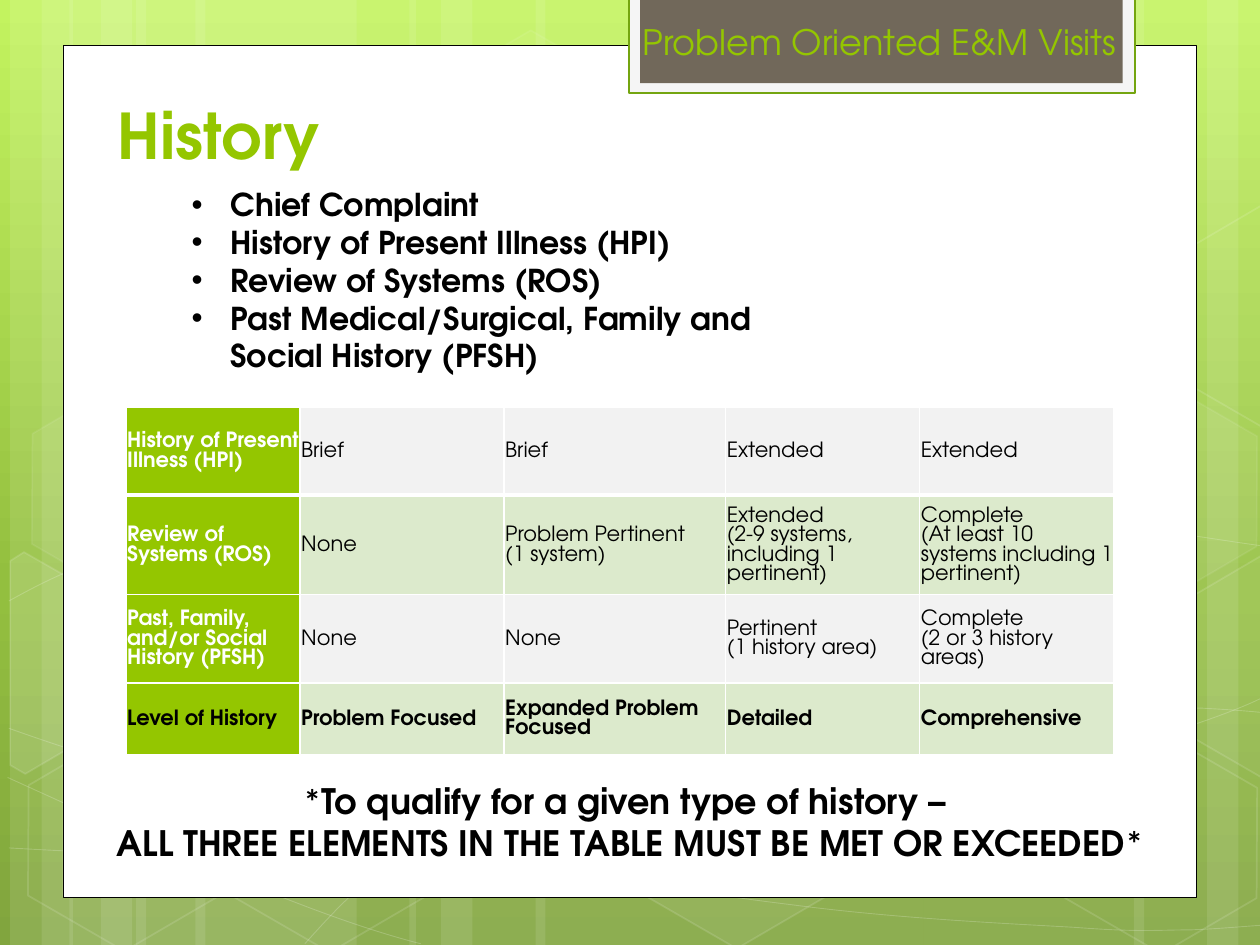
import copy
import math
from lxml import etree
from pptx import Presentation
from pptx.dml.color import RGBColor
from pptx.enum import shapes, text
from pptx.oxml.ns import qn
from pptx.util import Inches, Pt

FONT = "TeX Gyre Adventor"
WHITE, BLACK, GREEN = "FFFFFF", "000000", "94C600"
GREY_BAND, GREEN_BAND = "F2F2F2", "DCEACC"

STRIPES = [(1.08, 1.75), (0.08, 0.5), (0.33, 0.83), (1.55, 1.75), (0.55, 0.5), (0.8, 0.83),
           (7.33, 1.75), (9.58, 0.5), (9, 0.83), (4.25, 3.08), (3.25, 0.5), (3.5, 0.83)]
CURVES = [
    [(0.07, 6.73), (0.61, 6.76), (1.15, 6.79), (1.9, 6.78), (2.65, 6.77), (3.58, 6.75), (4.58, 6.65),
     (5.58, 6.55), (7, 6.36), (7.92, 6.17), (8.83, 5.98), (9.77, 5.68), (10.07, 5.51)],
    [(0.07, 4.77), (0.36, 4.61), (0.65, 4.46), (1.21, 4.31), (1.78, 4.16), (2.59, 3.94), (3.47, 3.87),
     (4.36, 3.8), (5.44, 3.79), (6.54, 3.87), (7.64, 3.95), (9.47, 4.26), (10.07, 4.34)],
    [(0.06, 6.17), (1.27, 6.72), (2.47, 7.27), (3.34, 7.49)],
    [(0.07, 5.78), (0.38, 5.89), (0.7, 6), (1.28, 6.16), (1.86, 6.31), (2.73, 6.56), (3.57, 6.73),
     (4.4, 6.9), (5.45, 7.08), (6.28, 7.18), (7.11, 7.29), (8, 7.33), (8.53, 7.36),
     (9.05, 7.4), (9.19, 7.38), (9.45, 7.38), (9.71, 7.37), (9.89, 7.35), (10.07, 7.34)],
    [(2.42, 7.49), (2.6, 7.29), (2.78, 7.09), (3.02, 6.91), (3.26, 6.73), (3.6, 6.53), (3.88, 6.39),
     (4.16, 6.25), (4.33, 6.19), (4.7, 6.09), (5.06, 5.99), (5.73, 5.85), (6.08, 5.78),
     (6.44, 5.71), (6.49, 5.71), (6.8, 5.69), (7.11, 5.66), (7.6, 5.63), (7.94, 5.62),
     (8.29, 5.61), (8.86, 5.62), (8.86, 5.62), (9.08, 5.62), (9.31, 5.62), (9.53, 5.62),
     (9.71, 5.63), (9.88, 5.64), (10.06, 5.66)],
]
HEXAGONS = [(3.34, 0.36, 4, 8), (4.97, 5.89, 6, 12), (0.11, 5.91, 0, 12), (0.14, 3.12, 7, 8),
            (1.74, 5.92, 0, 12), (7.53, 4.53, 10, 12), (8.34, 5.93, 0, 12), (8.34, 3.14, 7, 8)]
CUT_HEXAGONS = [
    ((0.36, 5.35), 10, [(0.08, 4.45), (0.19, 4.38), (0.96, 4.82), (0.95, 5.7), (0.2, 6.14), (0.08, 6.07)]),
    ((9.85, 5.2), 4, [(9.26, 4.85), (10.01, 4.41), (10.09, 4.46), (10.09, 6.13), (10.02, 6.17), (9.26, 5.73)]),
    ((9.85, 2.41), 0, [(9.26, 2.07), (10.01, 1.63), (10.1, 1.68), (10.09, 3.35), (10.02, 3.39), (9.26, 2.95)]),
]
ELEMENTS = ["Chief Complaint", "History of Present Illness (HPI)", "Review of Systems (ROS)",
            "Past Medical/Surgical, Family and Social History (PFSH)"]
LEVELS = [
    ["History of Present Illness (HPI)", "Brief", "Brief", "Extended", "Extended"],
    ["Review of Systems (ROS)", "None", "Problem Pertinent\n(1 system)",
     "Extended\n(2-9 systems, including 1 pertinent)", "Complete\v(At least 10 systems including 1 pertinent)"],
    ["Past, Family, and/or Social History (PFSH)", "None", "None", "Pertinent\v(1 history area)",
     "Complete\n(2 or 3 history areas)"],
    ["Level of History", "Problem Focused", "Expanded Problem Focused", "Detailed", "Comprehensive"],
]


def rgb(value):
    return RGBColor.from_string(value)


def place(part, box):
    part.left, part.top, part.width, part.height = (Inches(n) for n in box)


def paint(part, fill=None, line=None, width=1, fill_alpha=100, line_alpha=100):
    part.shadow.inherit = False
    for target, colour, alpha, route in ((part.fill, fill, fill_alpha, "p:spPr/a:solidFill/a:srgbClr"),
                                         (part.line.fill, line, line_alpha, "p:spPr/a:ln/a:solidFill/a:srgbClr")):
        if not colour or not alpha:
            target.background()
            continue
        target.solid()
        target.fore_color.rgb = rgb(colour)
        if alpha < 100:
            etree.SubElement(part.element.xpath(route)[0], qn("a:alpha"), val=str(alpha * 1000))
    if line:
        part.line.width = Pt(width)


def style(paragraph, size, colour, bold=False, font=FONT):
    for run in paragraph.runs:
        run.font.name, run.font.size, run.font.bold = font, Pt(size), bold
        run.font.color.rgb = rgb(colour)


def panel(parent, box, **look):
    part = parent.shapes.add_shape(shapes.MSO_SHAPE.RECTANGLE, *(Inches(n) for n in box))
    paint(part, **look)


def outline(parent, points, close):
    spots = [(Inches(x), Inches(y)) for x, y in points]
    builder = parent.shapes.build_freeform(*spots[0], scale=1.0)
    builder.add_line_segments(spots[1:], close=close)
    return builder.convert_to_shape()


def curve(parent, knots):
    part = outline(parent, knots, False)
    segments = part.element.xpath(".//a:lnTo")
    for start in range(0, len(segments), 3):
        bend = etree.Element(qn("a:cubicBezTo"))
        segments[start].addprevious(bend)
        for segment in segments[start:start + 3]:
            bend.append(segment[0])
            segment.getparent().remove(segment)
    return part


def turn_back(point, centre, degrees):
    dx, dy = point[0] - centre[0], point[1] - centre[1]
    c, s = math.cos(math.radians(degrees)), math.sin(math.radians(degrees))
    return centre[0] + dx * c + dy * s, centre[1] - dx * s + dy * c


def backdrop(slide):
    fill = slide.background.fill
    fill.gradient()
    stop_list = slide.element.xpath(".//a:gsLst")[0]
    stop_list.append(copy.deepcopy(stop_list[-1]))
    for stop, (position, colour) in zip(fill.gradient_stops, [(0, "C3F35F"), (0.62, "93BF3F"), (1, "81A53E")]):
        stop.position = position
        stop.color.rgb = rgb(colour)
    fill.gradient_angle = 270
    scenery = slide.shapes.add_group_shape()
    for left, width in STRIPES:
        panel(scenery, (left, 0, width, 7.5), fill=WHITE, fill_alpha=10)
    for knots in CURVES:
        paint(curve(scenery, knots), line=WHITE, width=0.5, line_alpha=20)
    for left, top, fill_alpha, line_alpha in HEXAGONS:
        hexagon = scenery.shapes.add_shape(shapes.MSO_SHAPE.HEXAGON, Inches(left), Inches(top),
                                           Inches(1.75), Inches(1.52))
        hexagon.adjustments[0], hexagon.adjustments[1] = 0.285, 1.155
        hexagon.rotation = 30
        paint(hexagon, WHITE, WHITE, fill_alpha=fill_alpha, line_alpha=line_alpha)
    for centre, fill_alpha, corners in CUT_HEXAGONS:
        cut = outline(scenery, [turn_back(corner, centre, 30) for corner in corners], True)
        cut.rotation = 30
        paint(cut, WHITE, WHITE, fill_alpha=fill_alpha, line_alpha=12)
    panel(slide, (0.5, 0.36, 9, 6.76), fill=WHITE, line=BLACK, width=0.5)


def text_frame_at(slide, box):
    frame = slide.shapes.add_textbox(*(Inches(n) for n in box)).text_frame
    frame.word_wrap = True
    return frame


def topic_tab(slide, box):
    left, top, width, height = box
    panel(slide, box, fill="F5F5F5", line="74A510", width=1.25)
    panel(slide, (left + 0.09, top, width - 0.19, height - 0.08), fill="71685A")
    topic = text_frame_at(slide, (left + 0.01, top + 0.01, width - 0.02, height - 0.08))
    topic.vertical_anchor = text.MSO_ANCHOR.MIDDLE
    topic.text = "Problem Oriented E&M Visits"
    style(topic.paragraphs[0], 20, GREEN)


def heading(slide, box):
    title = slide.shapes.title
    slide.shapes.element.append(title.element)
    place(title, box)
    frame = title.text_frame
    frame.text = "History"
    frame.auto_size = text.MSO_AUTO_SIZE.NONE
    frame.vertical_anchor = text.MSO_ANCHOR.BOTTOM
    frame.paragraphs[0].alignment = text.PP_ALIGN.LEFT
    style(frame.paragraphs[0], 36, GREEN, True)


def element_list(slide, box):
    body = slide.placeholders[1]
    slide.shapes.element.append(body.element)
    place(body, box)
    frame = body.text_frame
    frame.text = "\n".join(ELEMENTS)
    frame.auto_size = text.MSO_AUTO_SIZE.NONE
    for item in frame.paragraphs:
        item.space_before = Pt(0)
        properties = item._p.get_or_add_pPr()
        properties.set("marL", str(Inches(0.31)))
        properties.set("indent", str(-Inches(0.31)))
        style(item, 18, BLACK, True)


def cell_borders(cell, row):
    widths = {"lnL": 1, "lnR": 1, "lnT": 3 if row == 1 else 1, "lnB": 3 if row == 0 else 1}
    properties = cell._tc.get_or_add_tcPr()
    for index, (side, width) in enumerate(widths.items()):
        border = etree.Element(qn("a:" + side), w=str(Pt(width)))
        solid = etree.SubElement(border, qn("a:solidFill"))
        etree.SubElement(solid, qn("a:srgbClr"), val=WHITE)
        properties.insert(index, border)


def level_table(slide, box):
    table = slide.shapes.add_table(len(LEVELS), len(LEVELS[0]), *(Inches(n) for n in box)).table
    table.first_row = table.horz_banding = False
    for column, width in zip(table.columns, (1.38, 1.62, 1.76, 1.54, 1.54)):
        column.width = Inches(width)
    for r, (height, words) in enumerate(zip((0.7, 0.79, 0.7, 0.57), LEVELS)):
        table.rows[r].height = Inches(height)
        last = r == len(LEVELS) - 1
        for c, wording in enumerate(words):
            cell = table.cell(r, c)
            cell.text_frame.text = wording
            cell.vertical_anchor = text.MSO_ANCHOR.MIDDLE
            cell.margin_left = cell.margin_top = Inches(0.01)
            cell.margin_right = cell.margin_bottom = 0
            cell.fill.solid()
            cell.fill.fore_color.rgb = rgb(GREEN if c == 0 else (GREY_BAND, GREEN_BAND)[r % 2])
            cell_borders(cell, r)
            for paragraph in cell.text_frame.paragraphs:
                style(paragraph, 12, WHITE if c == 0 and not last else BLACK, c == 0 or last)


def rule_note(slide, box):
    frame = text_frame_at(slide, box)
    lines = [("*", "To qualify for a given type of history – "),
             ("ALL THREE ELEMENTS IN THE TABLE MUST BE MET OR EXCEEDED", "*")]
    for index, pieces in enumerate(lines):
        line = frame.add_paragraph() if index else frame.paragraphs[0]
        line.alignment = text.PP_ALIGN.CENTER
        for piece in pieces:
            line.add_run().text = piece
        style(line, 20, BLACK, True)
        for run in line.runs:
            if run.text == "*":
                run.font.name = "Calibri"


def main():
    deck = Presentation()
    deck.slide_width, deck.slide_height = Inches(10), Inches(7.5)
    slide = deck.slides.add_slide(deck.slide_layouts[1])
    backdrop(slide)
    topic_tab(slide, (4.99, -0.02, 4.02, 0.76))
    heading(slide, (0.83, 0.67, 3.92, 0.75))
    level_table(slide, (1, 3.23, 7.83, 2.77))
    rule_note(slide, (0.5, 6.14, 9, 0.77))
    element_list(slide, (1.42, 1.42, 5.33, 1.62))
    deck.save("out.pptx")


if __name__ == "__main__":
    main()
